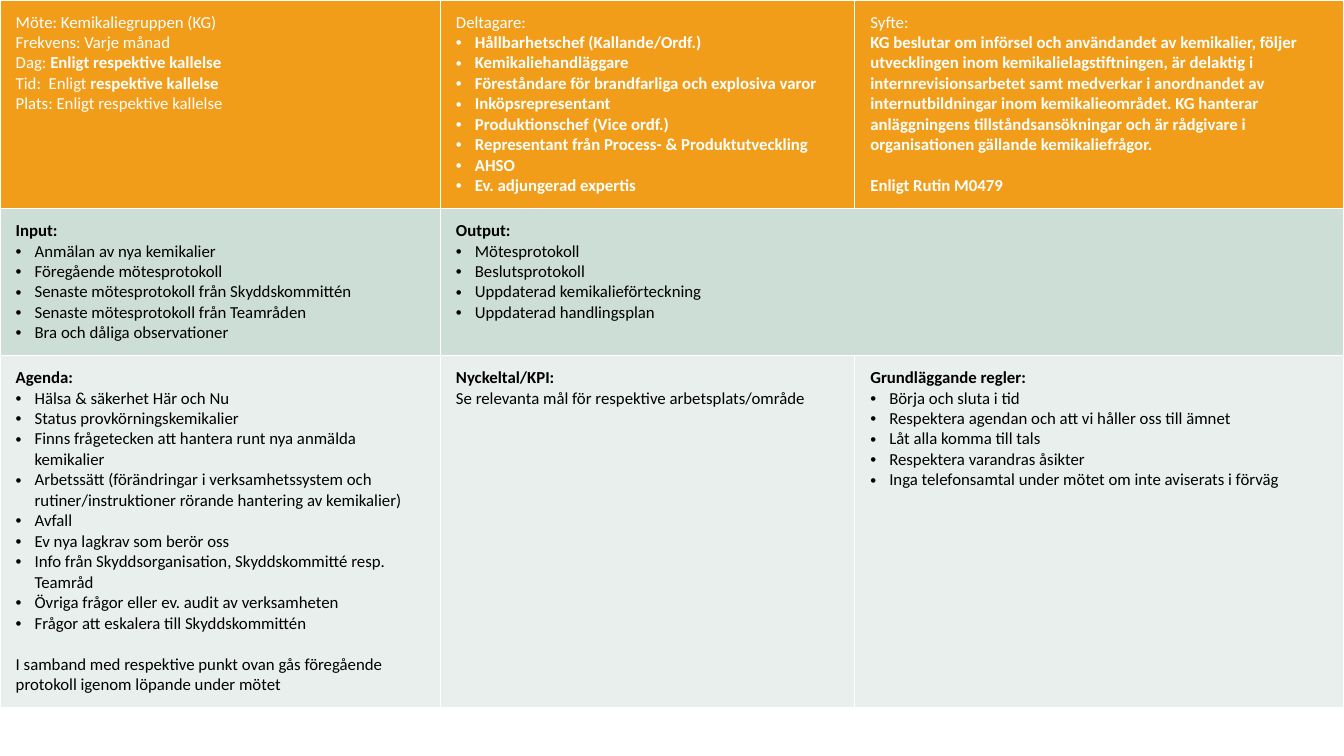
from lxml import etree
from pptx import Presentation
from pptx.dml.color import RGBColor
from pptx.oxml.ns import qn
from pptx.util import Pt

WHITE = RGBColor(0xFF, 0xFF, 0xFF)
BLACK = RGBColor(0x00, 0x00, 0x00)
ORANGE = RGBColor(0xF1, 0x9D, 0x19)
GREEN = RGBColor(0xCD, 0xDE, 0xD6)
PALE_GREEN = RGBColor(0xE8, 0xEF, 0xEC)

FONT = "Calibri"
SIZE = Pt(12)
LINE_GAP = Pt(14.65)
INDENT = Pt(13.5)
COLUMNS = [314.5, 296, 349.5]
ROWS = [148.5, 104.5, 251.5]

PARTICIPANTS = [
    "Hållbarhetschef (Kallande/Ordf.)",
    "Kemikaliehandläggare",
    "Föreståndare för brandfarliga och explosiva varor",
    "Inköpsrepresentant",
    "Produktionschef (Vice ordf.)",
    "Representant från Process- & Produktutveckling",
    "AHSO",
    "Ev. adjungerad expertis",
]
PURPOSE = (
    "KG beslutar om införsel och användandet av kemikalier, följer "
    "utvecklingen inom kemikalielagstiftningen, är delaktig i "
    "internrevisionsarbetet samt medverkar i anordnandet av "
    "internutbildningar inom kemikalieområdet. KG hanterar "
    "anläggningens tillståndsansökningar och är rådgivare i "
    "organisationen gällande kemikaliefrågor."
)
INPUTS = [
    "Anmälan av nya kemikalier",
    "Föregående mötesprotokoll",
    "Senaste mötesprotokoll från Skyddskommittén",
    "Senaste mötesprotokoll från Teamråden",
    "Bra och dåliga observationer",
]
OUTPUTS = [
    "Mötesprotokoll",
    "Beslutsprotokoll",
    "Uppdaterad kemikalieförteckning",
    "Uppdaterad handlingsplan",
]
AGENDA = [
    "Hälsa & säkerhet Här och Nu",
    "Status provkörningskemikalier",
    "Finns frågetecken att hantera runt nya anmälda kemikalier",
    "Arbetssätt (förändringar i verksamhetssystem och "
    "rutiner/instruktioner rörande hantering av kemikalier)",
    "Avfall",
    "Ev nya lagkrav som berör oss",
    "Info från Skyddsorganisation, Skyddskommitté resp. Teamråd",
    "Övriga frågor eller ev. audit av verksamheten",
    "Frågor att eskalera till Skyddskommittén",
]
RULES = [
    "Börja och sluta i tid",
    "Respektera agendan och att vi håller oss till ämnet",
    "Låt alla komma till tals",
    "Respektera varandras åsikter",
    "Inga telefonsamtal under mötet om inte aviserats i förväg",
]


def add_text(tf, text, color=BLACK, bold=False, bold_tail="", bullet=False, before=0):
    """Add one paragraph; bold_tail is a bold run that follows the text."""
    p = tf.paragraphs[0]
    if p.runs:
        p = tf.add_paragraph()
    p.space_before = before
    if bullet:
        pPr = p._p.get_or_add_pPr()
        pPr.set("marL", str(INDENT))
        pPr.set("indent", str(-INDENT))
        etree.SubElement(pPr, qn("a:buFont"), typeface="Arial")
        etree.SubElement(pPr, qn("a:buChar"), char="•")
    for part, is_bold in ((text, bold), (bold_tail, True)):
        if part:
            r = p.add_run()
            r.text = part
            r.font.name = FONT
            r.font.size = SIZE
            r.font.bold = is_bold
            r.font.color.rgb = color


def add_list(tf, title, items, title_bold=True, color=BLACK, bold=False):
    add_text(tf, title, color=color, bold=title_bold)
    for item in items:
        add_text(tf, item, color=color, bold=bold, bullet=True)


def style_cell(cell, fill):
    cell.margin_left = Pt(11.25)
    cell.margin_top = cell.margin_right = cell.margin_bottom = Pt(8.64)
    tcPr = cell._tc.get_or_add_tcPr()
    for side in ("a:lnL", "a:lnR", "a:lnT", "a:lnB"):
        ln = etree.SubElement(tcPr, qn(side), w=str(Pt(1)))
        solid = etree.SubElement(ln, qn("a:solidFill"))
        etree.SubElement(solid, qn("a:srgbClr"), val=str(WHITE))
    cell.fill.solid()
    cell.fill.fore_color.rgb = fill


def add_grid(s):
    frame = s.shapes.add_table(len(ROWS), len(COLUMNS), 0, 0, Pt(sum(COLUMNS)), Pt(sum(ROWS)))
    table = frame.table
    table.first_row = table.horz_banding = False
    for column, width in zip(table.columns, COLUMNS):
        column.width = Pt(width)
    for row, height, fill in zip(table.rows, ROWS, (ORANGE, GREEN, PALE_GREEN)):
        row.height = Pt(height)
        for cell in row.cells:
            style_cell(cell, fill)
    table.cell(1, 1).merge(table.cell(1, 2))
    return table


def fill_header(meeting, participants, purpose):
    for text, tail in (
        ("Möte: Kemikaliegruppen (KG)", ""),
        ("Frekvens: Varje månad", ""),
        ("Dag: ", "Enligt respektive kallelse"),
        ("Tid:  Enligt ", "respektive kallelse"),
        ("Plats: Enligt respektive kallelse", ""),
    ):
        add_text(meeting, text, color=WHITE, bold_tail=tail)
    add_list(participants, "Deltagare:", PARTICIPANTS, title_bold=False, color=WHITE, bold=True)
    add_text(purpose, "Syfte:", color=WHITE)
    add_text(purpose, PURPOSE, color=WHITE, bold=True)
    add_text(purpose, "Enligt Rutin M0479", color=WHITE, bold=True, before=LINE_GAP)


def fill_agenda(agenda, kpi, rules):
    add_list(agenda, "Agenda:", AGENDA)
    add_text(
        agenda,
        "I samband med respektive punkt ovan gås föregående "
        "protokoll igenom löpande under mötet",
        before=LINE_GAP,
    )
    add_text(kpi, "Nyckeltal/KPI:", bold=True)
    add_text(kpi, "Se relevanta mål för respektive arbetsplats/område")
    add_list(rules, "Grundläggande regler:", RULES)


def main():
    prs = Presentation()
    prs.slide_width, prs.slide_height = Pt(960), Pt(540)
    s = prs.slides.add_slide(prs.slide_layouts[6])
    table = add_grid(s)
    header, flow, agenda = [[cell.text_frame for cell in row.cells] for row in table.rows]
    fill_header(*header)
    add_list(flow[0], "Input:", INPUTS)
    add_list(flow[1], "Output:", OUTPUTS)
    fill_agenda(*agenda)
    prs.save("out.pptx")


if __name__ == "__main__":
    main()
